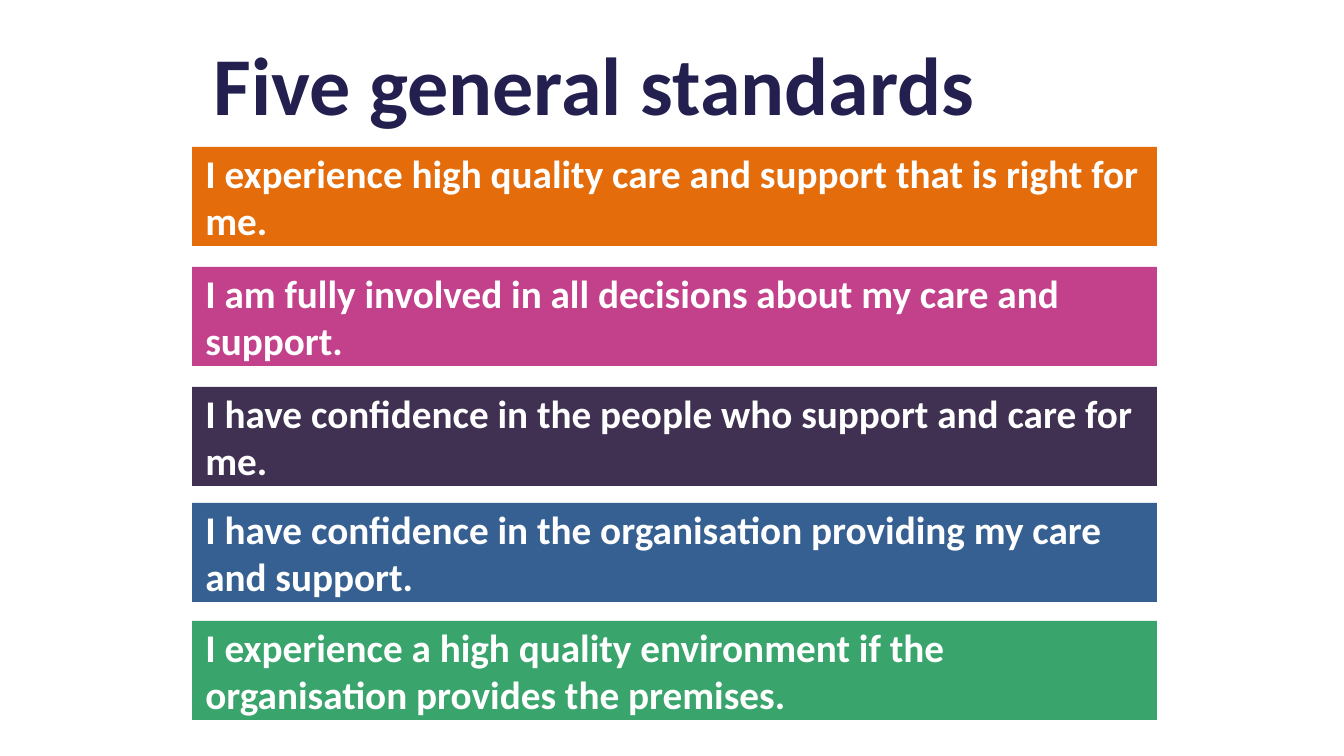
"""Build the slide of five general care standards as coloured bars."""
from pptx import Presentation
from pptx.dml.color import RGBColor
from pptx.enum.shapes import MSO_SHAPE
from pptx.enum.text import MSO_ANCHOR, PP_ALIGN
from pptx.util import Pt

RECTANGLE = MSO_SHAPE.RECTANGLE
MIDDLE = MSO_ANCHOR.MIDDLE
LEFT = PP_ALIGN.LEFT

TITLE = "Five general standards"
STANDARDS = [
    (147, "orange", "I experience high quality care and support that is right for me."),
    (267, "pink", "I am fully involved in all decisions about my care and support."),
    (387, "purple", "I have confidence in the people who support and care for me."),
    (503, "blue", "I have confidence in the organisation providing my care and support."),
    (621, "green", "I experience a high quality environment if the organisation provides the premises."),
]

THEME = {
    "font": "Calibri",
    "title_size": 44,
    "bar_size": 21,
    "navy": "232050",
    "white": "FFFFFF",
    "orange": "E46C0A",
    "pink": "C3418B",
    "purple": "403152",
    "blue": "376092",
    "green": "39A56C",
}

PX_TO_EMU = 914400 / 134.4
SLIDE_SIZE = (1344, 756)
TITLE_BOX = (200, 20, 829, 126)
BAR_LEFT, BAR_WIDTH, BAR_HEIGHT = 192, 965, 99


def px(length):
    return round(length * PX_TO_EMU)


def color(name):
    return RGBColor.from_string(THEME[name])


def set_attributes(target, values):
    for name, value in values.items():
        setattr(target, name, value)


def write_text(shape, text, size, color_name):
    frame = shape.text_frame
    frame.text = text
    set_attributes(frame, {"word_wrap": True, "vertical_anchor": MIDDLE})
    paragraph = frame.paragraphs[0]
    paragraph.alignment = LEFT
    font = paragraph.runs[0].font
    set_attributes(font, {"name": THEME["font"], "size": Pt(THEME[size]), "bold": True})
    font.color.rgb = color(color_name)


def add_title(slide):
    title = slide.shapes.title
    set_attributes(title, dict(zip(("left", "top", "width", "height"), map(px, TITLE_BOX))))
    write_text(title, TITLE, "title_size", "navy")


def add_bar(slide, top, fill, text):
    box = (BAR_LEFT, top, BAR_WIDTH, BAR_HEIGHT)
    bar = slide.shapes.add_shape(RECTANGLE, *map(px, box))
    bar.shadow.inherit = False
    bar.fill.solid()
    bar.fill.fore_color.rgb = color(fill)
    bar.line.fill.background()
    write_text(bar, text, "bar_size", "white")


def main():
    presentation = Presentation()
    presentation.slide_width, presentation.slide_height = map(px, SLIDE_SIZE)
    slide = presentation.slides.add_slide(presentation.slide_layouts.get_by_name("Title Only"))
    add_title(slide)
    for top, fill, text in STANDARDS:
        add_bar(slide, top, fill, text)
    presentation.save("out.pptx")


if __name__ == "__main__":
    main()
